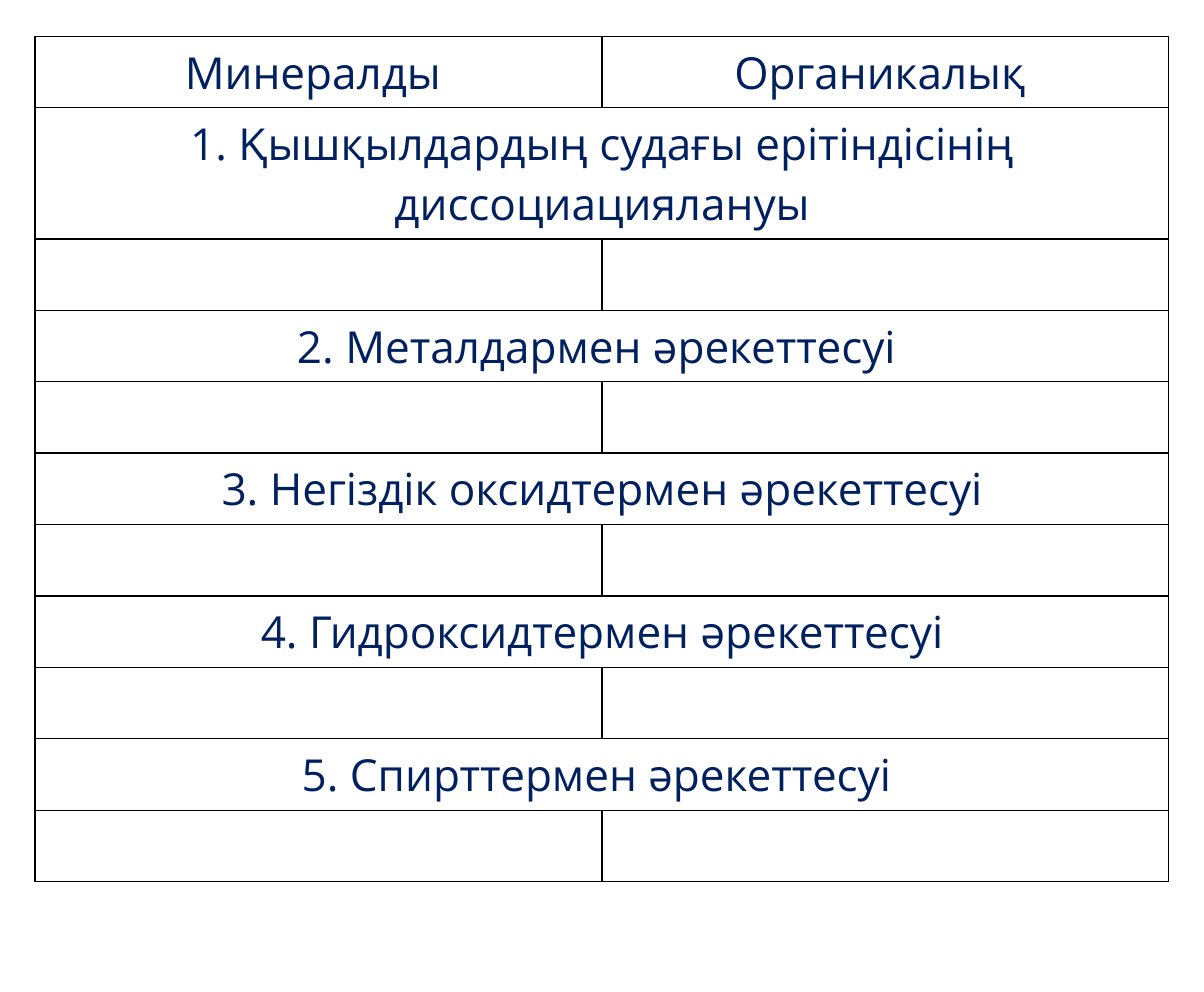
import pptx
import pptx.util
import pptx.dml.color
import pptx.enum.text
import pptx.oxml
import pptx.oxml.ns

Inches = pptx.util.Inches
COLORS = {"text": "002060", "border": "000000", "paper": "FFFFFF"}
FONT = "Open Sans"
ROW_HEIGHT = 0.63
TALL_ROW_HEIGHT = 1.15

ACID_KINDS = ["Минералды ", "Органикалық "]
REACTIONS = [
    "1. Қышқылдардың судағы ерітіндісінің диссоциациялануы",
    "2. Металдармен әрекеттесуі ",
    "3. Негіздік оксидтермен әрекеттесуі",
    "4. Гидроксидтермен әрекеттесуі",
    "5. Спирттермен әрекеттесуі ",
]


def rgb(name):
    return pptx.dml.color.RGBColor.from_string(COLORS[name])


def write_cell(cell, text):
    paragraph = cell.text_frame.paragraphs[0]
    paragraph.text = text
    paragraph.alignment = pptx.enum.text.PP_ALIGN.CENTER
    font = paragraph.runs[0].font
    font.name = FONT
    font.size = pptx.util.Pt(28)
    font.color.rgb = rgb("text")


def style_cell(cell):
    # Borders come before the fill in the cell properties
    properties = cell._tc.get_or_add_tcPr()
    for side in ("lnL", "lnR", "lnT", "lnB"):
        properties.append(pptx.oxml.parse_xml(
            f'<a:{side} {pptx.oxml.ns.nsdecls("a")} w="{pptx.util.Pt(1)}">'
            f'<a:solidFill><a:srgbClr val="{COLORS["border"]}"/></a:solidFill>'
            f'</a:{side}>'))
    cell.fill.solid()
    cell.fill.fore_color.rgb = rgb("paper")


def add_comparison_table(slide):
    row_count = 1 + 2 * len(REACTIONS)
    height = ROW_HEIGHT * (row_count - 1) + TALL_ROW_HEIGHT
    comparison = slide.shapes.add_table(
        row_count, len(ACID_KINDS),
        Inches(0.31), Inches(0.32), Inches(10), Inches(height)).table
    comparison.first_row = False
    comparison.horz_banding = False

    for column in comparison.columns:
        column.width = Inches(5)
    for row in comparison.rows:
        row.height = Inches(ROW_HEIGHT)
    comparison.rows[1].height = Inches(TALL_ROW_HEIGHT)
    for cell in comparison.iter_cells():
        style_cell(cell)

    # Heading row
    for column, kind in enumerate(ACID_KINDS):
        write_cell(comparison.cell(0, column), kind)

    # Each reaction spans the table, with an empty answer row below it
    for index, reaction in enumerate(REACTIONS):
        row = 1 + 2 * index
        heading = comparison.cell(row, 0)
        heading.merge(comparison.cell(row, 1))
        write_cell(heading, reaction)


def main():
    deck = pptx.Presentation()
    deck.slide_width = Inches(10.62)
    deck.slide_height = Inches(8.75)
    slide = deck.slides.add_slide(deck.slide_layouts[6])
    add_comparison_table(slide)
    deck.save("out.pptx")


if __name__ == "__main__":
    main()
